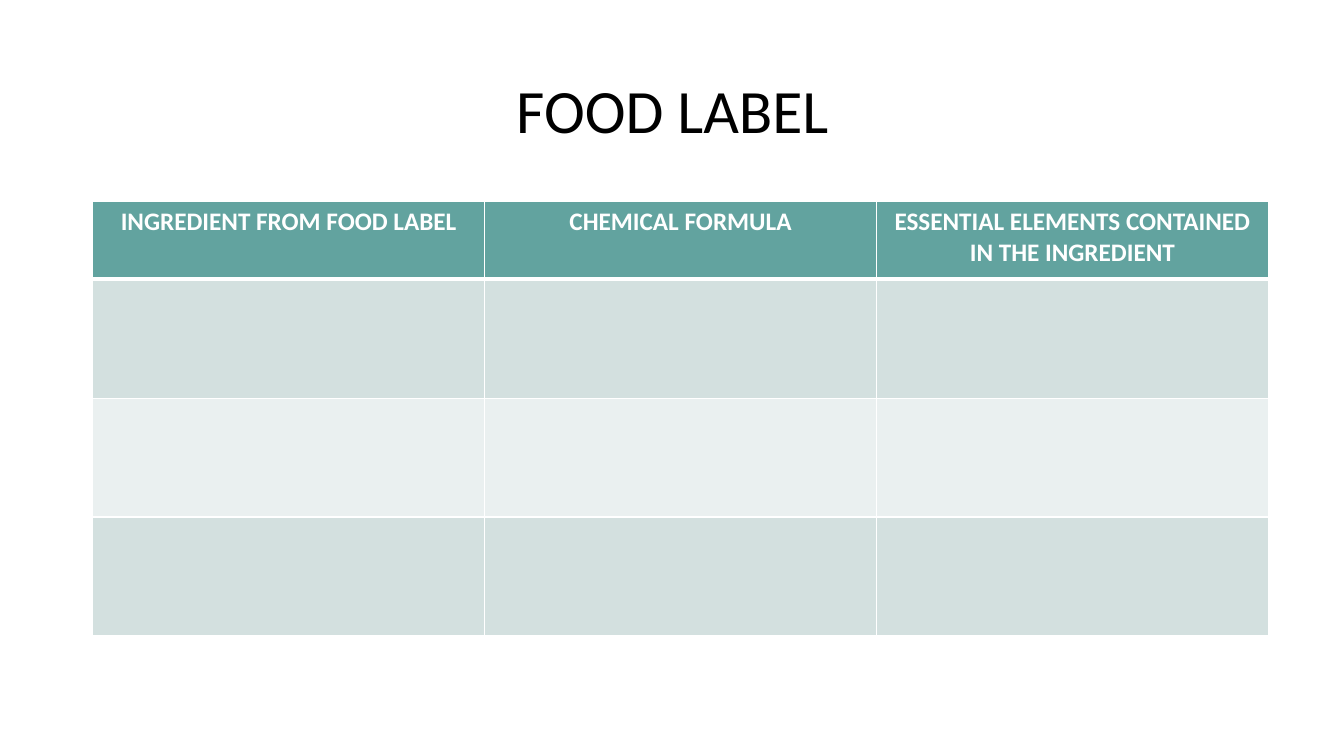
from lxml.etree import SubElement
from pptx import Presentation
from pptx.dml.color import RGBColor
from pptx.enum.text import MSO_ANCHOR, PP_ALIGN
from pptx.oxml.ns import qn
from pptx.util import Inches, Pt

HEADINGS = [
    "INGREDIENT FROM FOOD LABEL",
    "CHEMICAL FORMULA",
    "ESSENTIAL ELEMENTS CONTAINED IN THE INGREDIENT",
]
ROW_FILLS = ["62A39F", "D3E0DF", "EAF0F0", "D3E0DF"]
ROW_HEIGHTS = [0.77, 1.18, 1.18, 1.18]
BORDER_COLOR = "FFFFFF"


def format_text(paragraph, size, color, bold=False):
    paragraph.alignment = PP_ALIGN.CENTER
    for run in paragraph.runs:
        run.font.name = "Calibri"
        run.font.size = Pt(size)
        run.font.bold = bold
        run.font.color.rgb = RGBColor.from_string(color)


def add_border(cell, side, points):
    """Draw one cell side (L, R, T or B); call before setting the fill."""
    properties = cell._tc.get_or_add_tcPr()
    line = SubElement(properties, qn(f"a:ln{side}"), w=str(Pt(points)))
    fill = SubElement(line, qn("a:solidFill"))
    SubElement(fill, qn("a:srgbClr"), val=BORDER_COLOR)


presentation = Presentation()
presentation.slide_width = Inches(13.33)
presentation.slide_height = Inches(7.5)
slide = presentation.slides.add_slide(presentation.slide_layouts[5])

title = slide.shapes.title
title.left, title.top = Inches(0.92), Inches(0.4)
title.width, title.height = Inches(11.5), Inches(1.45)
title.text_frame.text = "FOOD LABEL"
title.text_frame.vertical_anchor = MSO_ANCHOR.MIDDLE
title_paragraph = title.text_frame.paragraphs[0]
title_paragraph.line_spacing = 0.9
format_text(title_paragraph, 44, "000000")

table = slide.shapes.add_table(
    len(ROW_HEIGHTS), len(HEADINGS),
    Inches(0.92), Inches(2), Inches(11.66), Inches(sum(ROW_HEIGHTS)),
).table

for row_index, (height, color) in enumerate(zip(ROW_HEIGHTS, ROW_FILLS)):
    table.rows[row_index].height = Inches(height)
    for cell in table.rows[row_index].cells:
        add_border(cell, "L", 1)
        add_border(cell, "R", 1)
        add_border(cell, "T", 3 if row_index == 1 else 1)
        add_border(cell, "B", 3 if row_index == 0 else 1)
        cell.fill.solid()
        cell.fill.fore_color.rgb = RGBColor.from_string(color)

for column_index, heading in enumerate(HEADINGS):
    cell = table.cell(0, column_index)
    cell.text_frame.text = heading
    format_text(cell.text_frame.paragraphs[0], 18, "FFFFFF", bold=True)

presentation.save("out.pptx")
